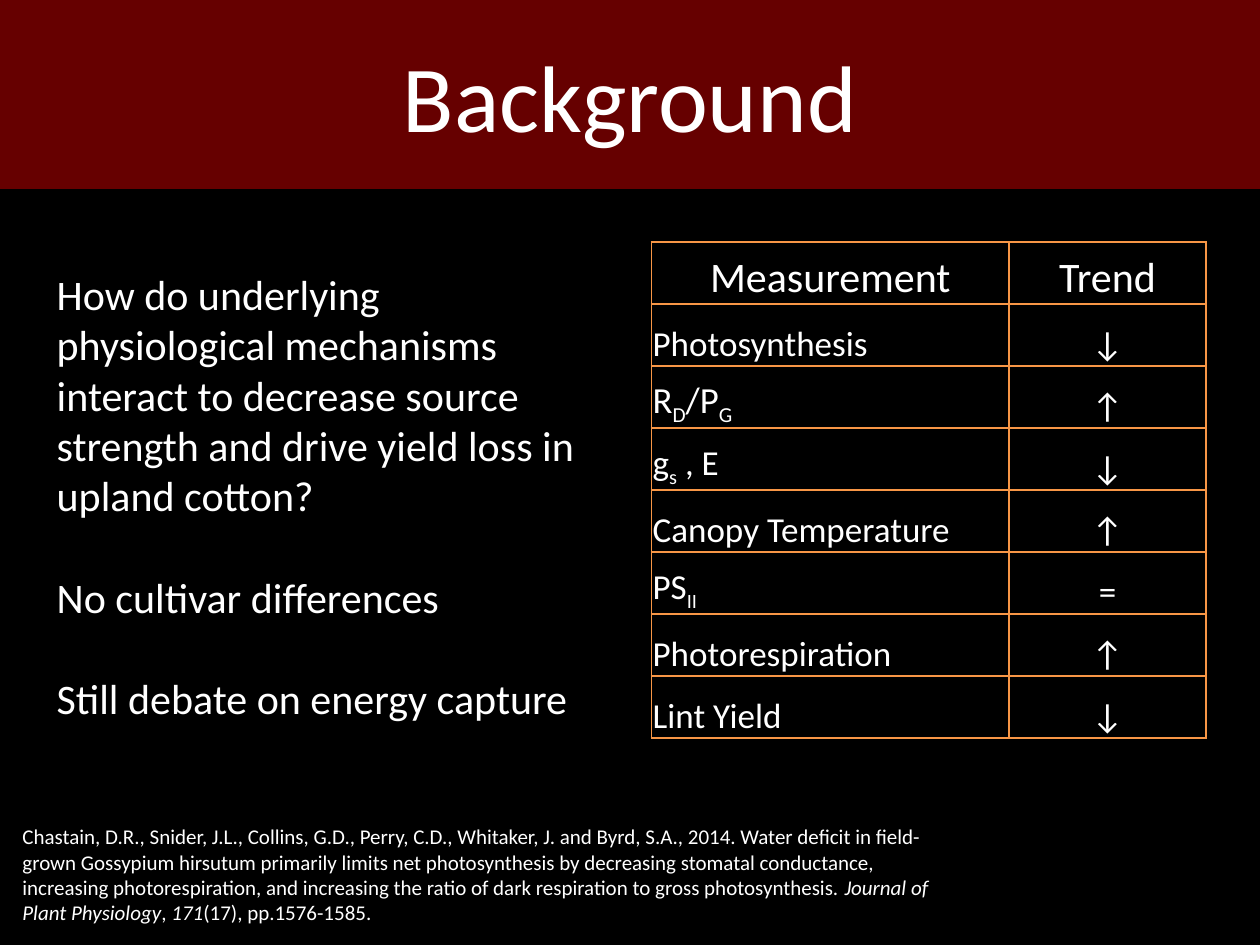
from pptx import Presentation
from pptx.dml.color import RGBColor
from pptx.enum.text import MSO_ANCHOR as Anchor, MSO_AUTO_SIZE as AutoSize, PP_ALIGN as Align
from pptx.oxml import parse_xml
from pptx.oxml.ns import nsdecls
from pptx.util import Inches, Pt

COLORS = {"background": "000000", "band": "660000", "text": "FFFFFF", "border": "F79646"}
FONT = "Calibri"
SUB, ITALIC = "subscript", "italic"

QUESTIONS = [
    "How do underlying physiological mechanisms interact to decrease source "
    "strength and drive yield loss in upland cotton?",
    "No cultivar differences",
    "Still debate on energy capture",
]
# Each measurement: its runs, its trend and its text size
MEASUREMENTS = [
    (["Photosynthesis"], "↓", 20),
    (["R", ("D", SUB), "/P", ("G", SUB)], "↑", 21),
    (["g", ("s", SUB), " , E"], "↓", 20),
    (["Canopy Temperature"], "↑", 20),
    (["PS", ("II", SUB)], "=", 20),
    (["Photorespiration"], "↑", 20),
    (["Lint Yield"], "↓", 20),
]
CITATION = [
    "Chastain, D.R., Snider, J.L., Collins, G.D., Perry, C.D., Whitaker, J. and Byrd, S.A., "
    "2014. Water deficit in field-grown Gossypium hirsutum primarily limits net photosynthesis "
    "by decreasing stomatal conductance, increasing photorespiration, and increasing the ratio "
    "of dark respiration to gross photosynthesis. ",
    ("Journal of Plant Physiology", ITALIC), ", ", ("171", ITALIC), "(17), pp.1576-1585.",
]


def rgb(name):
    return RGBColor.from_string(COLORS[name])


def write(paragraph, runs, size, align=Align.LEFT, space_before=0):
    """Fill a paragraph with plain strings and (text, style) pairs."""
    paragraph.alignment = align
    paragraph.space_before = Pt(space_before)
    for item in runs:
        text, style = (item, None) if isinstance(item, str) else item
        run = paragraph.add_run()
        run.text = text
        run.font.name = FONT
        run.font.size = Pt(size)
        run.font.color.rgb = rgb("text")
        if style == ITALIC:
            run.font.italic = True
        elif style == SUB:
            run._r.get_or_add_rPr().set("baseline", "-25000")


def place(shape, left, top, width, height):
    shape.left, shape.top = Inches(left), Inches(top)
    shape.width, shape.height = Inches(width), Inches(height)


def add_title_band(slide, box):
    title = slide.shapes.title
    place(title, *box)
    title.fill.solid()
    title.fill.fore_color.rgb = rgb("band")
    title.text_frame.vertical_anchor = Anchor.MIDDLE
    write(title.text_frame.paragraphs[0], ["Background"], 54, Align.CENTER)


def add_questions(slide, box):
    body = slide.placeholders[1]
    place(body, *box)
    frame = body.text_frame
    frame.auto_size = AutoSize.NONE
    for index, text in enumerate(QUESTIONS):
        paragraph = frame.add_paragraph() if index else frame.paragraphs[0]
        write(paragraph, [text], 24, space_before=29 if index else 0)
        properties = paragraph._p.get_or_add_pPr()
        properties.set("marL", "0")
        properties.set("indent", "0")
        properties.append(parse_xml(f"<a:buNone {nsdecls('a')}/>"))


def format_cell(cell):
    cell.margin_left = cell.margin_right = cell.margin_top = Inches(0.01)
    cell.margin_bottom = 0
    cell.vertical_anchor = Anchor.BOTTOM
    cell.fill.background()
    properties = cell._tc.get_or_add_tcPr()
    for index, edge in enumerate(("lnL", "lnR", "lnT", "lnB")):
        properties.insert(index, parse_xml(
            f'<a:{edge} {nsdecls("a")} w="{Pt(1)}"><a:solidFill>'
            f'<a:srgbClr val="{COLORS["border"]}"/></a:solidFill></a:{edge}>'))


def add_trend_table(slide, box):
    left, top, width, height = map(Inches, box)
    row_count = len(MEASUREMENTS) + 1
    table = slide.shapes.add_table(row_count, 2, left, top, width, height).table
    table.first_row = table.horz_banding = False
    table.columns[0].width = Inches(2.84)
    table.columns[1].width = width - Inches(2.84)
    rows = [(["Measurement"], "Trend", 24)] + MEASUREMENTS
    for index, (runs, trend, size) in enumerate(rows):
        name_cell, trend_cell = table.rows[index].cells
        format_cell(name_cell)
        format_cell(trend_cell)
        write(name_cell.text_frame.paragraphs[0], runs, size,
              Align.LEFT if index else Align.CENTER)
        write(trend_cell.text_frame.paragraphs[0], [trend], 20 if index else 24, Align.CENTER)


def add_citation(slide, box):
    frame = slide.shapes.add_textbox(*map(Inches, box)).text_frame
    frame.word_wrap = True
    write(frame.paragraphs[0], CITATION, 12)


def main():
    presentation = Presentation()
    presentation.slide_width, presentation.slide_height = Inches(10), Inches(7.5)
    slide = presentation.slides.add_slide(presentation.slide_layouts[1])
    slide.background.fill.solid()
    slide.background.fill.fore_color.rgb = rgb("background")
    add_title_band(slide, (0, 0, 10, 1.5))
    add_trend_table(slide, (5.17, 1.92, 4.4, 3.94))
    add_citation(slide, (0.08, 6.49, 7.57, 0.91))
    add_questions(slide, (0.35, 2.08, 4.49, 4.44))
    presentation.save("out.pptx")


if __name__ == "__main__":
    main()
